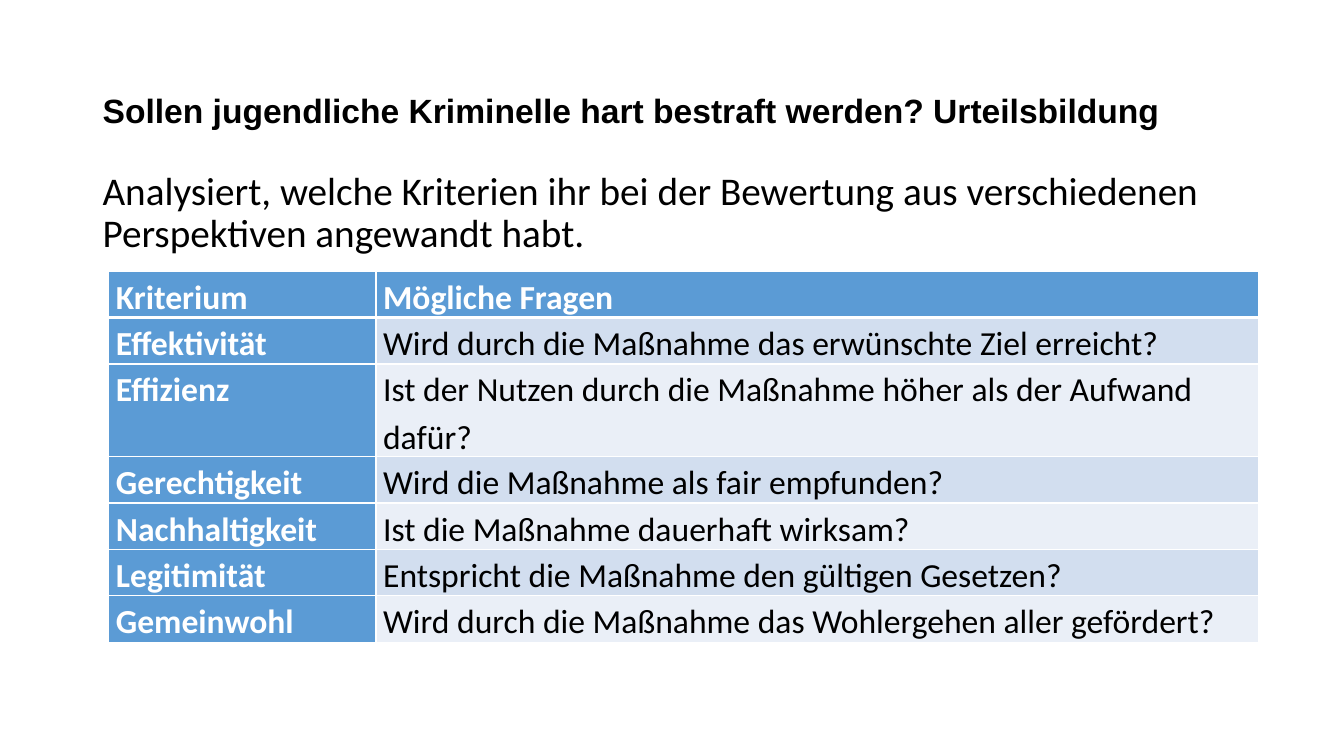
"""Build a slide with judgement criteria and the questions that belong to them."""
from lxml import etree
from pptx import Presentation
from pptx.dml.color import RGBColor
from pptx.enum.text import MSO_ANCHOR
from pptx.oxml.ns import qn
from pptx.util import Inches, Pt

MIDDLE, TOP = MSO_ANCHOR.MIDDLE, MSO_ANCHOR.TOP
COLORS = {
    "text": "000000",
    "light": "FFFFFF",
    "accent": "5B9BD5",
    "odd": "D2DEEF",
    "even": "EAEFF7",
}
CRITERIA = [
    ("Kriterium", "Mögliche Fragen"),
    ("Effektivität", "Wird durch die Maßnahme das erwünschte Ziel erreicht?"),
    ("Effizienz", "Ist der Nutzen durch die Maßnahme höher als der Aufwand dafür?"),
    ("Gerechtigkeit", "Wird die Maßnahme als fair empfunden?"),
    ("Nachhaltigkeit", "Ist die Maßnahme dauerhaft wirksam?"),
    ("Legitimität", "Entspricht die Maßnahme den gültigen Gesetzen?"),
    ("Gemeinwohl", "Wird durch die Maßnahme das Wohlergehen aller gefördert?"),
]


def write(frame, text, size, font, color, bold, spacing):
    frame.text = text
    paragraph = frame.paragraphs[0]
    paragraph.line_spacing = spacing
    style = paragraph.runs[0].font
    style.size, style.name, style.bold = Pt(size), font, bold
    style.color.rgb = RGBColor.from_string(COLORS[color])


def add_border(cell, position, side, points):
    line = etree.Element(qn(f"a:ln{side}"), w=str(Pt(points)))
    fill = etree.SubElement(line, qn("a:solidFill"))
    etree.SubElement(fill, qn("a:srgbClr"), val=COLORS["light"])
    cell._tc.get_or_add_tcPr().insert(position, line)


deck = Presentation()
deck.slide_width, deck.slide_height = Inches(13.33), Inches(7.5)
W, H = deck.slide_width, deck.slide_height
slide = deck.slides.add_slide(deck.slide_layouts[6])

left, width = int(0.069 * W), int(0.863 * W)
heading = "Sollen jugendliche Kriminelle hart bestraft werden? Urteilsbildung"
task = ("Analysiert, welche Kriterien ihr bei der Bewertung aus "
        "verschiedenen Perspektiven angewandt habt.")
for text, top, height, anchor, size, font, bold in [
    (heading, 0.053, 0.193, MIDDLE, 24, "Arial", True),
    (task, 0.22, 0.68, TOP, 28, "Calibri", False),
]:
    frame = slide.shapes.add_textbox(left, int(top * H), width, int(height * H)).text_frame
    frame.word_wrap = True
    frame.vertical_anchor = anchor
    write(frame, text, size, font, "text", bold, 0.9)

column_widths = [Inches(2.65), Inches(8.75)]
row_height = int(0.06 * H)
table = slide.shapes.add_table(
    len(CRITERIA), len(column_widths), Inches(1.08), Inches(2.69),
    sum(column_widths), row_height * len(CRITERIA)).table
for column, column_width in zip(table.columns, column_widths):
    column.width = column_width

for row, entry in enumerate(CRITERIA):
    for col, text in enumerate(entry):
        cell = table.cell(row, col)
        cell.margin_left = cell.margin_right = Inches(0.07)
        cell.margin_top = cell.margin_bottom = 0
        is_header = row == 0 or col == 0
        band = "odd" if row % 2 else "even"
        cell.fill.solid()
        cell.fill.fore_color.rgb = RGBColor.from_string(COLORS["accent" if is_header else band])
        write(cell.text_frame, text, 24, "Calibri",
              "light" if is_header else "text", is_header, 1.15)
        borders = {"L": 1, "R": 1, "T": 3 if row == 1 else 1, "B": 3 if row == 0 else 1}
        for position, (side, points) in enumerate(borders.items()):
            add_border(cell, position, side, points)

deck.save("out.pptx")
